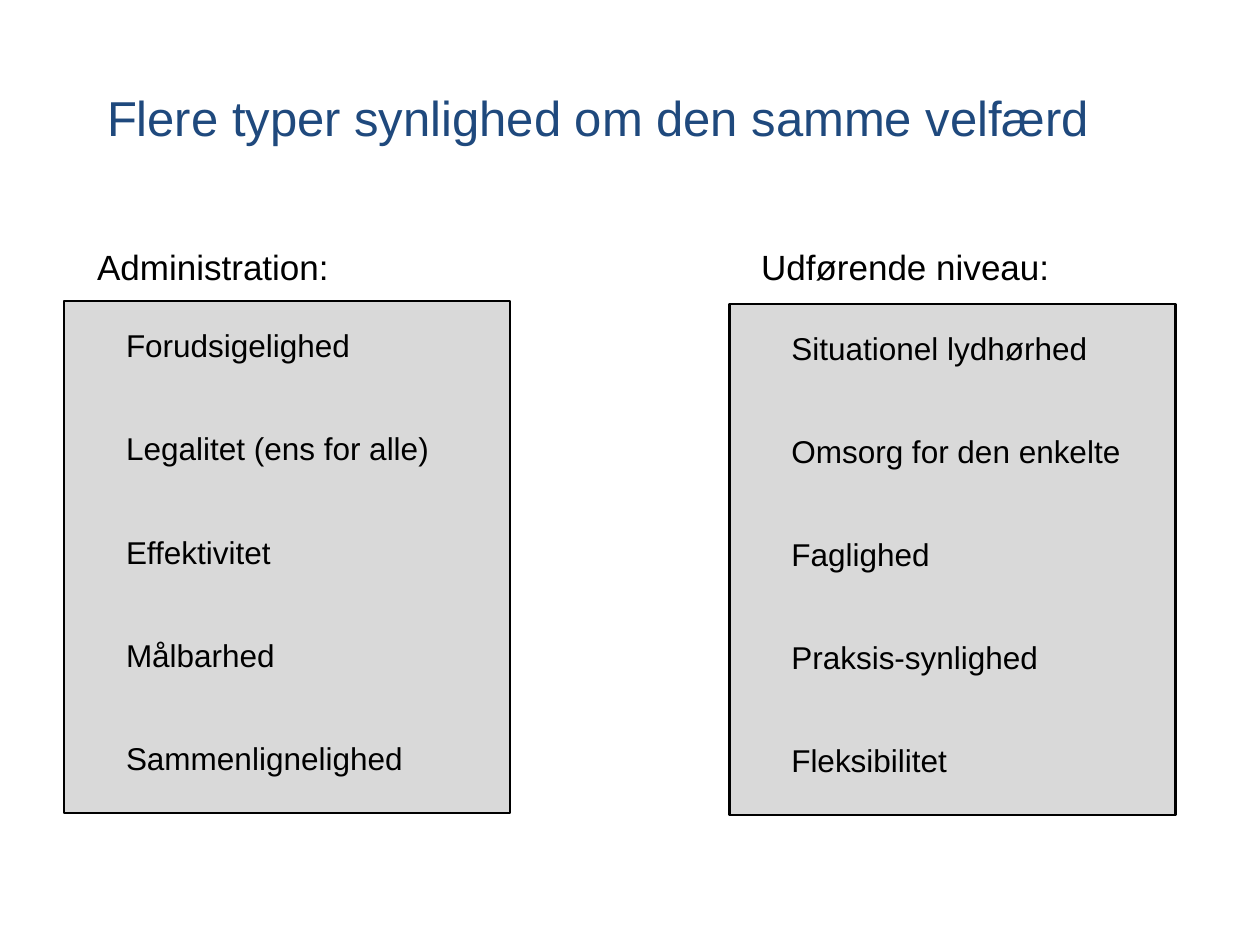
from pptx import Presentation
from pptx.dml.color import RGBColor
from pptx.enum.text import MSO_ANCHOR, MSO_AUTO_SIZE, PP_ALIGN
from pptx.oxml.xmlchemy import OxmlElement
from pptx.util import Inches, Pt

COLORS = {"title": "1F497D", "text": "000000", "panel": "D9D9D9", "line": "000000"}
COLUMNS = [
    ("Administration:", 0.67, 0.51, 2.39,
     ["Forudsigelighed", "Legalitet (ens for alle)", "Effektivitet",
      "Målbarhed", "Sammenlignelighed"]),
    ("Udførende niveau:", 5.94, 5.79, 2.41,
     ["Situationel lydhørhed", "Omsorg for den enkelte", "Faglighed",
      "Praksis-synlighed", "Fleksibilitet"]),
]


class Deck:
    """Holds the style and the current slide."""

    def __init__(self, font):
        self.font = font
        self.prs = Presentation()
        self.prs.slide_width, self.prs.slide_height = Inches(10), Inches(7.5)
        self.slide = self.prs.slides.add_slide(self.prs.slide_layouts[4])

    def place(self, slot, box, anchor):
        holder = self.slide.placeholders[slot]
        holder.left, holder.top, holder.width, holder.height = map(Inches, box)
        frame = holder.text_frame
        frame.word_wrap = True
        frame.auto_size = MSO_AUTO_SIZE.NONE
        frame.vertical_anchor = anchor
        return holder

    def add_text(self, para, text, size, color):
        run = para.add_run()
        run.text = text
        font = run.font
        font.name, font.size, font.bold = self.font, Pt(size), False
        font.color.rgb = RGBColor.from_string(COLORS[color])

    def plain(self, para, indent=0):
        props = para._p.get_or_add_pPr()
        props.set("marL", "0")
        props.set("indent", str(Inches(indent)))
        props.append(OxmlElement("a:buNone"))

    def title(self, text, box):
        frame = self.place(0, box, MSO_ANCHOR.MIDDLE).text_frame
        frame.margin_left, frame.margin_right = Inches(0.05), Inches(0.17)
        para = frame.paragraphs[0]
        para.alignment = PP_ALIGN.CENTER
        self.add_text(para, text, 28, "title")

    def label(self, slot, text, box):
        para = self.place(slot, box, MSO_ANCHOR.TOP).text_frame.paragraphs[0]
        para.space_before = Pt(0)
        self.plain(para)
        self.add_text(para, text, 20, "text")

    def panel(self, slot, items, box):
        holder = self.place(slot, box, MSO_ANCHOR.TOP)
        holder.fill.solid()
        holder.fill.fore_color.rgb = RGBColor.from_string(COLORS["panel"])
        holder.line.color.rgb = RGBColor.from_string(COLORS["line"])
        holder.line.width = Pt(1.25)
        frame = holder.text_frame
        for i, item in enumerate(items):
            para = frame.add_paragraph() if i else frame.paragraphs[0]
            para.line_spacing = 1.5
            para.space_before = Pt(26.5 if i else 0)
            self.plain(para, 0.39)
            self.add_text(para, item, 18, "text")


def main():
    deck = Deck("Arial")
    deck.title("Flere typer synlighed om den samme velfærd", (0.75, 0.3, 8.11, 1.25))
    for i, (head, inset, left, top, items) in enumerate(COLUMNS):
        deck.label(2 * i + 1, head, (inset, 1.9, 2.91, 0.43))
        deck.panel(2 * i + 2, items, (left, top, 3.54, 4.06))
    deck.prs.save("out.pptx")


if __name__ == "__main__":
    main()
